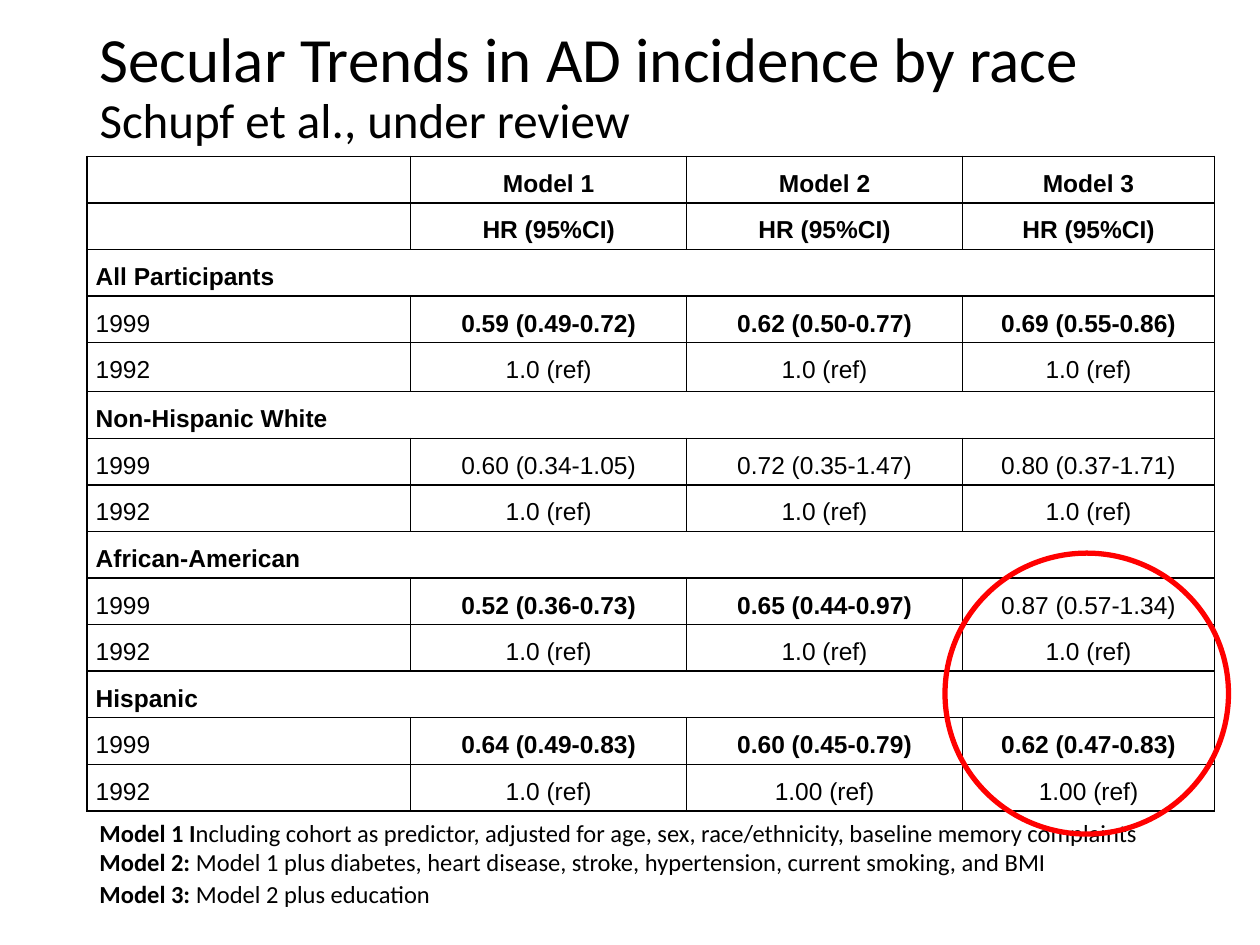
from dataclasses import dataclass
from lxml import etree
from pptx import Presentation
from pptx.dml.color import RGBColor as RGB
from pptx.enum.shapes import MSO_SHAPE
from pptx.enum.text import MSO_ANCHOR, MSO_AUTO_SIZE, PP_ALIGN
from pptx.oxml.ns import qn
from pptx.util import Inches, Pt


@dataclass
class Theme:
    text: RGB = RGB(0, 0, 0)
    paper: RGB = RGB(255, 255, 255)
    accent: RGB = RGB(255, 0, 0)
    border: str = "000000"
    title: int = 36
    subtitle: int = 28
    body: int = 14
    heading_font: str = "Calibri"
    table_font: str = "Arial"


theme = Theme()


def add_run(p, text, size, font, bold=None):
    r = p.add_run()
    r.text = text
    for name, value in {"size": Pt(size), "name": font, "bold": bold}.items():
        setattr(r.font, name, value)
    r.font.color.rgb = theme.text


def add_borders(cell):
    tcPr = cell._tc.get_or_add_tcPr()
    for i, side in enumerate(("lnL", "lnR", "lnT", "lnB")):
        ln = etree.Element(qn(f"a:{side}"), w=str(Pt(1)))
        fill = etree.SubElement(ln, qn("a:solidFill"))
        etree.SubElement(fill, qn("a:srgbClr"), val=theme.border)
        tcPr.insert(i, ln)


prs = Presentation()
prs.slide_width, prs.slide_height = Inches(10), Inches(7.5)
s = prs.slides.add_slide(prs.slide_layouts[5])

title = s.shapes.title
box = {"left": 0.69, "top": 0.16, "width": 8.62, "height": 1.08}
for name, value in box.items():
    setattr(title, name, Inches(value))
tf = title.text_frame
tf.auto_size = MSO_AUTO_SIZE.NONE
tf.vertical_anchor = MSO_ANCHOR.MIDDLE
p = tf.paragraphs[0]
p.alignment, p.line_spacing = PP_ALIGN.LEFT, 0.9
add_run(p, "Secular Trends in AD incidence by race", theme.title, theme.heading_font)
p.add_line_break()
add_run(p, "Schupf et al., under review", theme.subtitle, theme.heading_font)

REF = "1.0 (ref)"
groups = {
    "All Participants": (
        ["0.59 (0.49-0.72)", "0.62 (0.50-0.77)", "0.69 (0.55-0.86)"], [REF] * 3),
    "Non-Hispanic White": (
        ["0.60 (0.34-1.05)", "0.72 (0.35-1.47)", "0.80 (0.37-1.71)"], [REF] * 3),
    "African-American": (
        ["0.52 (0.36-0.73)", "0.65 (0.44-0.97)", "0.87 (0.57-1.34)"], [REF] * 3),
    "Hispanic": (
        ["0.64 (0.49-0.83)", "0.60 (0.45-0.79)", "0.62 (0.47-0.83)"],
        [REF, "1.00 (ref)", "1.00 (ref)"]),
}
rows = [["", "Model 1", "Model 2", "Model 3"], [""] + ["HR (95%CI)"] * 3]
for group, (hr_1999, hr_1992) in groups.items():
    rows += [[group, "", "", ""], ["1999"] + hr_1999, ["1992"] + hr_1992]

widths = [2.57, 2.19, 2.19, 2]
heights = [0.39 if i == 4 else 0.37 for i in range(len(rows))]
table = s.shapes.add_table(len(rows), len(widths), Inches(0.69), Inches(1.24),
                           Inches(sum(widths)), Inches(sum(heights))).table
table.first_row = table.horz_banding = False
for column, width in zip(table.columns, widths):
    column.width = Inches(width)
for i, (row, height) in enumerate(zip(rows, heights)):
    table.rows[i].height = Inches(height)
    is_header, is_group = i < 2, row[0] in groups
    for j, text in enumerate(row):
        cell = table.cell(i, j)
        cell.fill.solid()
        cell.fill.fore_color.rgb = theme.paper
        add_borders(cell)
        margins = {"margin_left": 0.07, "margin_right": 0.07, "margin_top": 0, "margin_bottom": 0}
        for name, value in margins.items():
            setattr(cell, name, Inches(value))
        if not text:
            continue
        p = cell.text_frame.paragraphs[0]
        p.alignment = PP_ALIGN.CENTER if j else PP_ALIGN.LEFT
        p.line_spacing, p.space_before = 1.5, Pt(6)
        is_significant = "-" in text and not is_group and float(text[-5:-1]) < 1
        add_run(p, text, theme.body, theme.table_font, is_header or is_group or is_significant)
    if is_group:
        table.cell(i, 0).merge(table.cell(i, len(widths) - 1))

notes = [
    ("Model 1 I", "ncluding cohort as predictor, adjusted for age, sex, race/ethnicity, "
                  "baseline memory complaints"),
    ("Model 2: ", "Model 1 plus diabetes, heart disease, stroke, hypertension, "
                  "current smoking, and BMI"),
    ("Model 3: ", "Model 2 plus education"),
]
tf = s.shapes.add_textbox(Inches(0.69), Inches(6.44), Inches(8.95), Inches(0.82)).text_frame
tf.word_wrap = True
tf.auto_size = MSO_AUTO_SIZE.SHAPE_TO_FIT_TEXT
for i, (label, text) in enumerate(notes):
    p = tf.add_paragraph() if i else tf.paragraphs[0]
    add_run(p, label, theme.body, theme.heading_font, True)
    add_run(p, text, theme.body, theme.heading_font, False)
p.line_spacing, p.space_after = 1.07, Pt(8)

ring = s.shapes.add_shape(MSO_SHAPE.OVAL, Inches(7.5), Inches(4.39), Inches(2.25), Inches(2.23))
ring.shadow.inherit = False
ring.fill.background()
ring.line.color.rgb = theme.accent
ring.line.width = Pt(3)

prs.save("out.pptx")
